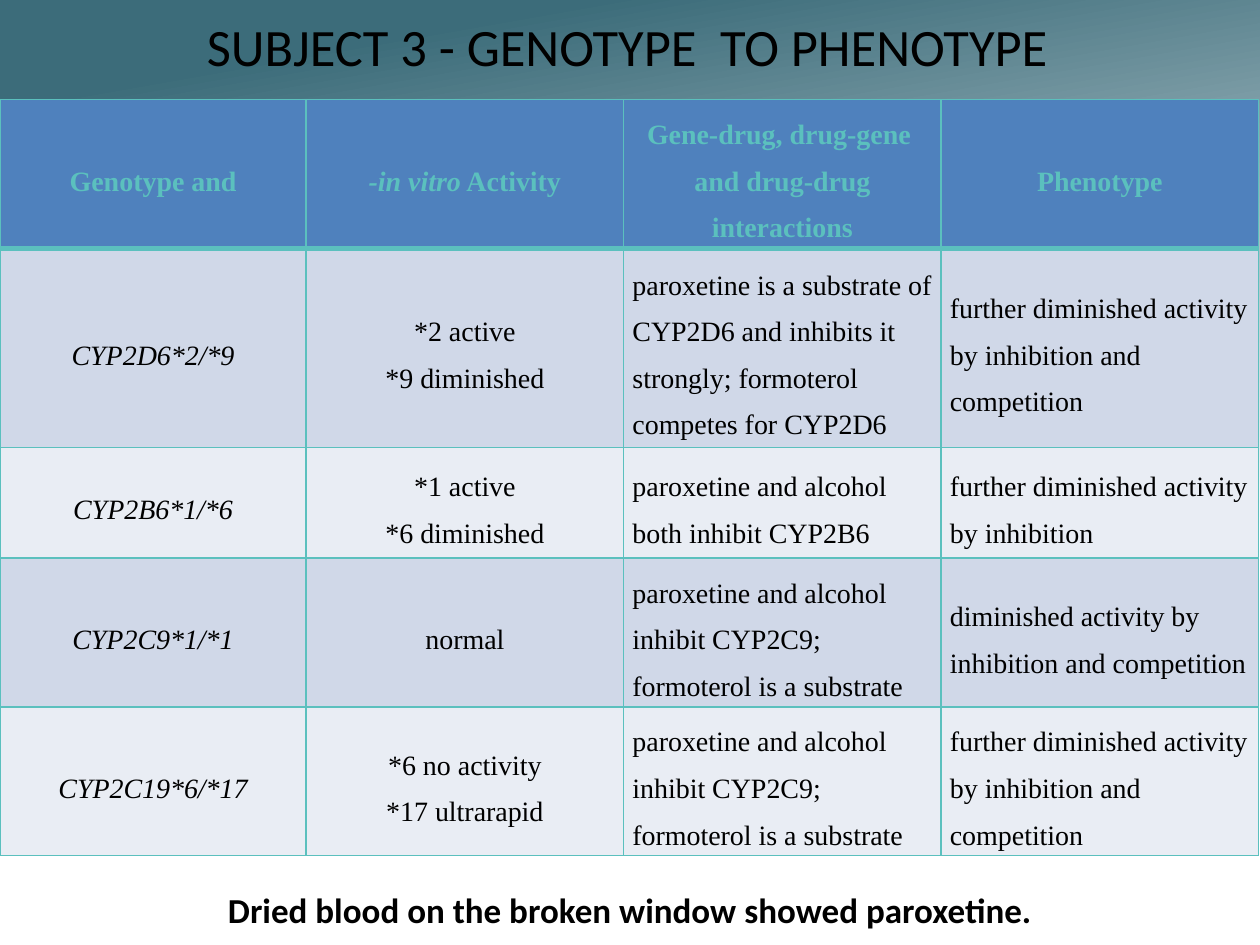
import lxml.etree
import pptx
import pptx.dml.color
import pptx.enum.text
import pptx.oxml
import pptx.oxml.ns
import pptx.util

Inches = pptx.util.Inches
Pt = pptx.util.Pt
CENTER = pptx.enum.text.PP_ALIGN.CENTER
LEFT = pptx.enum.text.PP_ALIGN.LEFT
TEAL = "5BC0BE"
BLACK = "000000"


def color(value):
    return pptx.dml.color.RGBColor.from_string(value)


def add_border(cell, side, width):
    """Draw one side (L, R, T or B) of a cell; call before setting the fill."""
    properties = cell._tc.get_or_add_tcPr()
    line = lxml.etree.SubElement(
        properties, pptx.oxml.ns.qn(f"a:ln{side}"), w=str(Pt(width)))
    fill = lxml.etree.SubElement(line, pptx.oxml.ns.qn("a:solidFill"))
    lxml.etree.SubElement(fill, pptx.oxml.ns.qn("a:srgbClr"), val=TEAL)


presentation = pptx.Presentation()
presentation.slide_width = Inches(10)
presentation.slide_height = Inches(7.5)
slide = presentation.slides.add_slide(presentation.slide_layouts[6])

# Background
background = slide.background.fill
background.gradient()
background.gradient_angle = 280
stops = [(0.09, "3C6C7A"), (0.65, "FFFFFF")]
for stop, (position, value) in zip(background.gradient_stops, stops):
    stop.position = position
    stop.color.rgb = color(value)

# Genotype table: a list inside a row holds the paragraphs of one cell
rows = [
    [["Genotype and"], ["-in vitro Activity"],
     ["Gene-drug, drug-gene ", "and drug-drug interactions"], ["Phenotype"]],
    [["CYP2D6*2/*9"], ["*2 active", "*9 diminished"],
     ["paroxetine is a substrate of CYP2D6 and inhibits it strongly; "
      "formoterol competes for CYP2D6"],
     ["further diminished activity by inhibition and competition"]],
    [["CYP2B6*1/*6"], ["*1 active", "*6 diminished"],
     ["paroxetine and alcohol both inhibit CYP2B6"],
     ["further diminished activity by inhibition"]],
    [["CYP2C9*1/*1"], ["normal"],
     ["paroxetine and alcohol inhibit CYP2C9; formoterol is a substrate"],
     ["diminished activity by inhibition and competition"]],
    [["CYP2C19*6/*17"], ["*6 no activity", "*17 ultrarapid"],
     ["paroxetine and alcohol inhibit CYP2C9; formoterol is a substrate"],
     ["further diminished activity by inhibition and competition"]],
]
column_widths = [2.43, 2.52, 2.52, 2.52]
row_heights = [1.18, 1.58, 0.88, 1.18, 1.18]
row_fills = ["4F81BD", "D0D8E8", "E9EDF4", "D0D8E8", "E9EDF4"]

table = slide.shapes.add_table(
    len(rows), len(column_widths), Inches(0), Inches(0.79),
    Inches(sum(column_widths)), Inches(sum(row_heights))).table
for column, width in zip(table.columns, column_widths):
    column.width = Inches(width)
for row, height in zip(table.rows, row_heights):
    row.height = Inches(height)

for row_index, row in enumerate(rows):
    is_header = row_index == 0
    for column_index, lines in enumerate(row):
        cell = table.cell(row_index, column_index)
        cell.margin_left = cell.margin_right = Inches(0.07)
        cell.margin_top = cell.margin_bottom = Inches(0)
        cell.vertical_anchor = pptx.enum.text.MSO_ANCHOR.MIDDLE
        add_border(cell, "L", 1)
        add_border(cell, "R", 1)
        add_border(cell, "T", 3 if row_index == 1 else 1)
        add_border(cell, "B", 3 if is_header else 1)
        cell.fill.solid()
        cell.fill.fore_color.rgb = color(row_fills[row_index])

        cell.text_frame.text = "\n".join(lines)
        for paragraph in cell.text_frame.paragraphs:
            paragraph.alignment = CENTER if is_header or column_index < 2 else LEFT
            paragraph.line_spacing = 1.5
            paragraph.font.name = "Times New Roman"
            paragraph.font.size = Pt(16)
            paragraph.font.bold = is_header
            paragraph.font.italic = not is_header and column_index == 0
            paragraph.font.color.rgb = color(TEAL if is_header else BLACK)

# Only the Latin words of the activity heading are italic
activity_heading = table.cell(0, 1).text_frame.paragraphs[0]
activity_heading.runs[0].text = "-in vitro"
activity_heading.runs[0].font.italic = True
activity_heading.add_run().text = " Activity"

# Title and closing remark
captions = [
    ("SUBJECT 3 - GENOTYPE  TO PHENOTYPE", 0.24, 0.06, 9.48, 0.61, 30, False),
    ("Dried blood on the broken window showed paroxetine.",
     0, 7, 10, 0.44, 20, True),
]
for text, left, top, width, height, size, bold in captions:
    text_box = slide.shapes.add_textbox(
        Inches(left), Inches(top), Inches(width), Inches(height))
    text_box.text_frame.word_wrap = True
    text_box.text_frame.auto_size = pptx.enum.text.MSO_AUTO_SIZE.SHAPE_TO_FIT_TEXT
    paragraph = text_box.text_frame.paragraphs[0]
    paragraph.text = text
    paragraph.alignment = CENTER
    paragraph.font.name = "Calibri"
    paragraph.font.size = Pt(size)
    paragraph.font.bold = bold
    paragraph.font.color.rgb = color(BLACK)

presentation.save("out.pptx")
